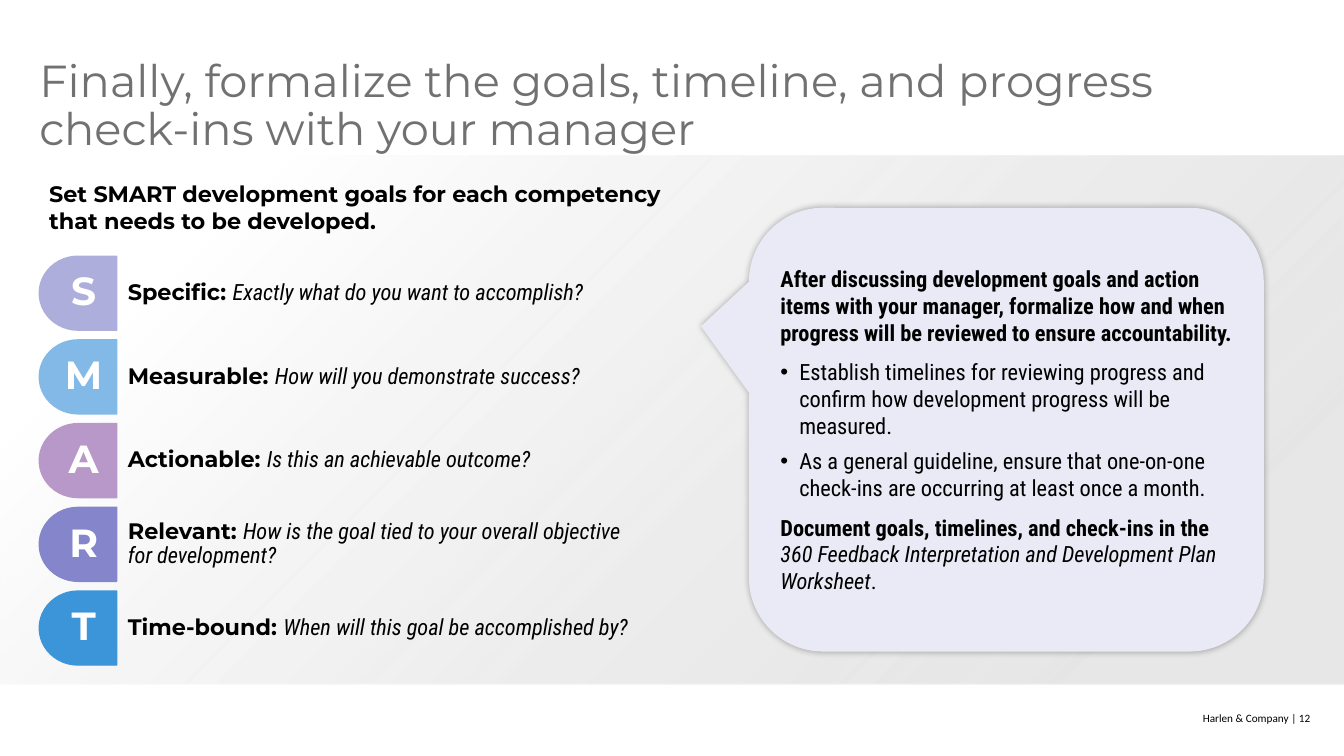
from dataclasses import dataclass

from lxml.etree import SubElement as Sub
from pptx import Presentation
from pptx.dml.color import RGBColor as Rgb
from pptx.enum.shapes import MSO_SHAPE as Kind
from pptx.enum.text import MSO_ANCHOR as Anchor, MSO_AUTO_SIZE as Fit, PP_ALIGN as Align
from pptx.oxml.ns import qn
from pptx.util import Pt


@dataclass(frozen=True)
class Theme:
    head: str = "Montserrat"
    body: str = "Roboto Condensed"
    foot: str = "Calibri"
    ink: str = "000000"
    white: str = "FFFFFF"
    title: str = "717171"
    band: str = "D9D9D9"
    bubble: str = "EAEAF6"
    big: int = 32
    mark: int = 28
    text: int = 16
    small: int = 8


T = Theme()

GOALS = [
    ("Specific", "Exactly what do you want to accomplish?", "ADAEDC"),
    ("Measurable", "How will you demonstrate success?", "82B9E6"),
    ("Actionable", "Is this an achievable outcome?", "B798C9"),
    ("Relevant", "How is the goal tied to your overall objective for development?", "8485CB"),
    ("Time-bound", "When will this goal be accomplished by?", "3C95D8"),
]


def style(par, face, size, color=T.ink, bold=None):
    font = par.font
    font.name, font.size, font.bold = face, Pt(size), bold
    font.color.rgb = Rgb.from_string(color)


def add_run(par, text, face=None, bold=None, italic=None):
    run = par.add_run()
    run.text = text
    run.font.name, run.font.bold, run.font.italic = face, bold, italic


def set_frame(shape, pads, anchor=Anchor.TOP):
    frame = shape.text_frame
    frame.word_wrap = True
    frame.auto_size = Fit.NONE
    frame.vertical_anchor = anchor
    left, top, right, foot = map(Pt, pads)
    frame.margin_left, frame.margin_top = left, top
    frame.margin_right, frame.margin_bottom = right, foot
    return frame


def add_box(slide, area, pads=(7.2, 3.6, 7.2, 3.6), anchor=Anchor.TOP):
    box = slide.shapes.add_textbox(*map(Pt, area))
    return set_frame(box, pads, anchor).paragraphs[0]


def add_form(slide, kind, area):
    form = slide.shapes.add_shape(kind, *map(Pt, area))
    form.shadow.inherit = False
    form.line.fill.background()
    return form


def fill_form(form, color):
    form.fill.solid()
    form.fill.fore_color.rgb = Rgb.from_string(color)


def add_band(slide):
    band = add_form(slide, Kind.RECTANGLE, (0, 110.9, 960.5, 378))
    band.fill.gradient()
    band.fill.gradient_angle = 315
    stops = band.fill.gradient_stops
    for stop, place, color in zip(stops, (0.15, 0.85), (T.white, T.band)):
        stop.position = place
        stop.color.rgb = Rgb.from_string(color)
    tint = list(band.element.spPr.iter(qn("a:srgbClr")))[-1]
    Sub(tint, qn("a:alpha"), val="64000")


def set_title(slide):
    title = slide.shapes.title
    title.left, title.top = Pt(28.1), Pt(41.8)
    title.width, title.height = Pt(851), Pt(89.3)
    par = set_frame(title, (0, 0, 0, 0)).paragraphs[0]
    par.text = "Finally, formalize the goals, timeline, and progress check-ins with your manager"
    par.alignment = Align.LEFT
    par.line_spacing = 0.9
    style(par, T.head, T.big, T.title)


def add_goal(slide, top, name, ask, color):
    tab = add_form(slide, Kind.FLOWCHART_DELAY, (28.1, top, 55.4, 52.8))
    tab.element.spPr.xfrm.set("flipH", "1")
    fill_form(tab, color)
    tab.line.color.rgb = Rgb.from_string(color)
    tab.line.width = Pt(1)
    par = set_frame(tab, (0.7, 20, 0.7, 20), Anchor.MIDDLE).paragraphs[0]
    par.text = name[0]
    par.alignment = Align.CENTER
    par.line_spacing = 0.9
    style(par, T.head, T.mark, T.white, True)

    par = add_box(slide, (83.5, top + 6.2, 369.4, 40.3), (7.9, 2.2, 2.2, 2.2), Anchor.MIDDLE)
    par.line_spacing = 0.9
    style(par, None, T.text)
    add_run(par, f"{name}: ", T.head, bold=True)
    add_run(par, ask, T.body, italic=True)


def add_bullet(par):
    props = par._p.get_or_add_pPr()
    props.set("marL", str(Pt(13.5)))
    props.set("indent", str(Pt(-13.5)))
    Sub(props, qn("a:buFont"), typeface="Arial")
    Sub(props, qn("a:buChar"), char="•")


def add_glow(form):
    props = form.element.spPr
    glow = Sub(props.find(qn("a:effectLst")), qn("a:outerShdw"),
               blurRad=str(Pt(5)), dist="0", dir="0", algn="ctr", rotWithShape="0")
    tint = Sub(glow, qn("a:srgbClr"), val=T.ink)
    Sub(tint, qn("a:alpha"), val="31000")


def add_bubble(slide):
    form = add_form(slide, Kind.ROUNDED_RECTANGULAR_CALLOUT, (535.2, 148.4, 368, 317))
    for index, value in enumerate((-0.593, -0.233, 0.167)):
        form.adjustments[index] = value
    fill_form(form, T.bubble)
    add_glow(form)
    frame = set_frame(form, (7.2, 3.6, 7.2, 3.6), Anchor.MIDDLE)
    parts = [
        ("After discussing development goals and action items with your manager, "
         "formalize how and when progress will be reviewed to ensure accountability.", 0, False, True),
        ("Establish timelines for reviewing progress and confirm how development "
         "progress will be measured.", 9, True, False),
        ("As a general guideline, ensure that one-on-one check-ins are occurring "
         "at least once a month.", 6, True, False),
    ]
    for index, (text, gap, dot, bold) in enumerate(parts):
        par = frame.add_paragraph() if index else frame.paragraphs[0]
        par.text = text
        par.alignment = Align.LEFT
        par.space_before = Pt(gap)
        if dot:
            add_bullet(par)
        style(par, T.body, T.text, bold=bold)

    last = frame.add_paragraph()
    last.alignment = Align.LEFT
    last.space_before = Pt(9)
    style(last, T.body, T.text)
    add_run(last, "Document goals, timelines, and check-ins in the ", bold=True)
    add_run(last, "360 Feedback Interpretation and Development Plan Worksheet", italic=True)
    add_run(last, ".")


def main():
    deck = Presentation()
    deck.slide_width, deck.slide_height = Pt(960.5), Pt(540)
    slide = deck.slides.add_slide(deck.slide_layouts[5])
    add_band(slide)
    set_title(slide)

    lead = add_box(slide, (28.1, 125.3, 484.6, 46))
    lead.text = "Set SMART development goals for each competency that needs to be developed."
    style(lead, T.head, T.text, bold=True)

    for row, goal in enumerate(GOALS):
        add_goal(slide, 183 + row * 59.8, *goal)
    add_bubble(slide)

    foot = add_box(slide, (773.3, 506.9, 163.4, 14.4), (0, 0, 0, 0))
    foot.text = "Harlen & Company | 12"
    foot.alignment = Align.RIGHT
    foot.line_spacing = 1.1
    style(foot, T.foot, T.small)
    deck.save("out.pptx")


if __name__ == "__main__":
    main()
